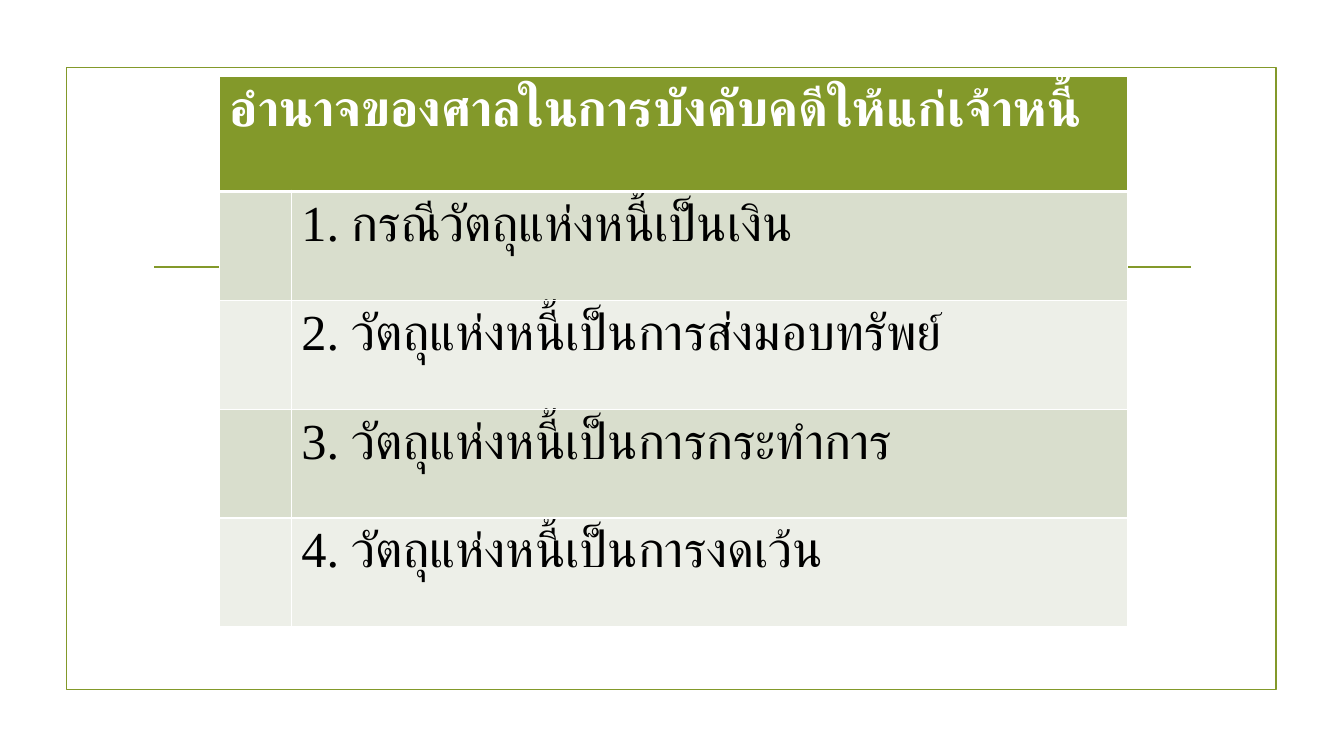
from lxml import etree
from pptx import Presentation
from pptx.dml.color import RGBColor
from pptx.enum import shapes
from pptx.oxml import ns
from pptx.util import Inches, Pt

COLORS = {
    "olive": "83992A",
    "band_dark": "D9DECD",
    "band_light": "EDEFE8",
    "white": "FFFFFF",
    "black": "000000",
}
HEADING = "อำนาจของศาลในการบังคับคดีให้แก่เจ้าหนี้"
CASES = [
    "กรณีวัตถุแห่งหนี้เป็นเงิน",
    "วัตถุแห่งหนี้เป็นการส่งมอบทรัพย์",
    "วัตถุแห่งหนี้เป็นการกระทำการ",
    "วัตถุแห่งหนี้เป็นการงดเว้น",
]


class SlideBuilder:
    font = "Times New Roman"
    size = 36
    line_width = 1.25

    def __init__(self, slide):
        self.slide = slide

    def color(self, name):
        return RGBColor.from_string(COLORS[name])

    def frame(self, left, top, width, height):
        sp = self.slide.shapes.add_shape(
            shapes.MSO_SHAPE.RECTANGLE,
            Inches(left), Inches(top), Inches(width), Inches(height))
        sp.shadow.inherit = False
        sp.fill.background()
        sp.line.color.rgb = self.color("olive")
        sp.line.width = Pt(self.line_width)

    def rule(self, x1, x2, y):
        line = self.slide.shapes.add_connector(
            shapes.MSO_CONNECTOR.STRAIGHT,
            Inches(x1), Inches(y), Inches(x2), Inches(y))
        line.line.color.rgb = self.color("olive")
        line.line.width = Pt(self.line_width)
        etree.SubElement(line._element.spPr, ns.qn("a:effectLst"))

    def table(self, left, top, widths, heights):
        tbl = self.slide.shapes.add_table(
            len(heights), len(widths), Inches(left), Inches(top),
            Inches(sum(widths)), Inches(sum(heights))).table
        for column, width in zip(tbl.columns, widths):
            column.width = Inches(width)
        for row, height in zip(tbl.rows, heights):
            row.height = Inches(height)
        return tbl

    def cell(self, cell, fill, top=1, bottom=1):
        tc_pr = cell._tc.get_or_add_tcPr()
        for side, width in (("L", 1), ("R", 1), ("T", top), ("B", bottom)):
            ln = etree.SubElement(tc_pr, ns.qn(f"a:ln{side}"), w=str(Pt(width)))
            solid = etree.SubElement(ln, ns.qn("a:solidFill"))
            etree.SubElement(solid, ns.qn("a:srgbClr"), val=COLORS["white"])
        cell.fill.solid()
        cell.fill.fore_color.rgb = self.color(fill)

    def cell_text(self, cell, content, color, bold=False):
        cell.text_frame.text = content
        r = cell.text_frame.paragraphs[0].runs[0]
        r.font.name = self.font
        r.font.size = Pt(self.size)
        r.font.bold = bold
        r.font.color.rgb = self.color(color)
        etree.SubElement(r.font._element, ns.qn("a:cs"), typeface=self.font)


def main():
    prs = Presentation()
    prs.slide_width = Inches(13.33)
    prs.slide_height = Inches(7.5)
    s = SlideBuilder(prs.slides.add_slide(prs.slide_layouts[6]))

    s.frame(0.66, 0.67, 12, 6.17)
    s.rule(1.53, 11.81, 2.65)

    tbl = s.table(2.18, 0.76, [0.71, 8.29], [1.14] + [1.08] * len(CASES))
    for col in range(2):
        s.cell(tbl.cell(0, col), "olive", bottom=3)
    tbl.cell(0, 0).merge(tbl.cell(0, 1))
    s.cell_text(tbl.cell(0, 0), HEADING, "white", bold=True)

    for row, case in enumerate(CASES, start=1):
        fill = "band_dark" if row % 2 else "band_light"
        for col in range(2):
            s.cell(tbl.cell(row, col), fill, top=3 if row == 1 else 1)
        s.cell_text(tbl.cell(row, 1), f"{row}. {case}", "black")

    prs.save("out.pptx")


if __name__ == "__main__":
    main()
